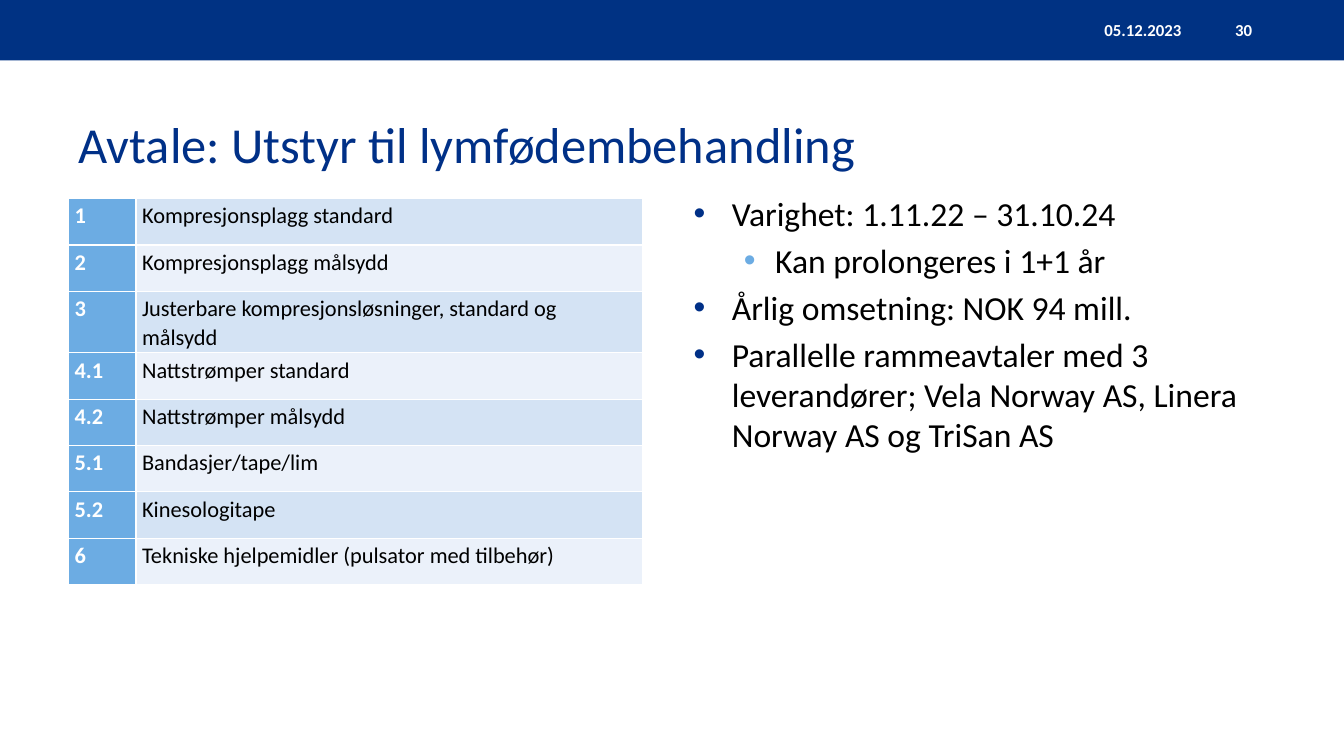
from lxml import etree
from pptx import Presentation
from pptx.dml.color import RGBColor
from pptx.enum.shapes import MSO_SHAPE
from pptx.enum.text import MSO_ANCHOR, PP_ALIGN
from pptx.oxml.ns import qn
from pptx.util import Inches, Pt

TITLE = "Avtale: Utstyr til lymfødembehandling"
DATE, PAGE = "05.12.2023", "30"
CATEGORIES = [
    ("1", "Kompresjonsplagg standard"),
    ("2", "Kompresjonsplagg målsydd"),
    ("3", "Justerbare kompresjonsløsninger, standard og målsydd"),
    ("4.1", "Nattstrømper standard"),
    ("4.2", "Nattstrømper målsydd"),
    ("5.1", "Bandasjer/tape/lim"),
    ("5.2", "Kinesologitape"),
    ("6", "Tekniske hjelpemidler (pulsator med tilbehør)"),
]
TERMS = [
    (0, "Varighet: 1.11.22 – 31.10.24"),
    (1, "Kan prolongeres i 1+1 år"),
    (0, "Årlig omsetning: NOK 94 mill."),
    (0, "Parallelle rammeavtaler med 3 leverandører; "
        "Vela Norway AS, Linera Norway AS og TriSan AS"),
]

BAND = RGBColor(0x00, 0x32, 0x83)
NAVY = RGBColor(0x00, 0x30, 0x87)
SKY = RGBColor(0x6C, 0xAC, 0xE3)
WHITE = RGBColor(0xFF, 0xFF, 0xFF)
BLACK = RGBColor(0x00, 0x00, 0x00)
STRIPES = (RGBColor(0xD4, 0xE3, 0xF4), RGBColor(0xEB, 0xF1, 0xFA))
BULLETS = [(0.38, 0.38, NAVY), (0.81, 0.31, SKY)]
TOP, MIDDLE = MSO_ANCHOR.TOP, MSO_ANCHOR.MIDDLE
LEFT, CENTER = PP_ALIGN.LEFT, PP_ALIGN.CENTER

FONT = "Calibri"
WIDTH, HEIGHT = 13.33, 7.5
BAND_HEIGHT = HEIGHT * 0.08
MARGIN = 0.68
TABLE_TOP, ROW_HEIGHT = 1.97, 0.46
COLUMNS = (0.67, 5.02)


def write(paragraph, text, size, color, bold=False):
    """Add one styled run to a paragraph."""
    run = paragraph.add_run()
    run.text = text
    run.font.name, run.font.size, run.font.bold = FONT, Pt(size), bold
    run.font.color.rgb = color


def text_frame(slide, place, anchor, inset=0.1):
    """Add a wrapping text box and return its frame."""
    frame = slide.shapes.add_textbox(*map(Inches, place)).text_frame
    frame.word_wrap = True
    frame.vertical_anchor = anchor
    frame.margin_left = frame.margin_right = Inches(inset)
    return frame


def add_bullet(paragraph, level):
    """Give a paragraph the indent and bullet of its level."""
    indent, hanging, color = BULLETS[level]
    paragraph.level = level
    props = paragraph._p.get_or_add_pPr()
    props.set("marL", str(Inches(indent)))
    props.set("indent", str(-Inches(hanging)))
    tint = etree.SubElement(props, qn("a:buClr"))
    etree.SubElement(tint, qn("a:srgbClr"), val=str(color))
    etree.SubElement(props, qn("a:buFont"), typeface="Arial")
    etree.SubElement(props, qn("a:buChar"), char="•")


def add_borders(cell):
    """Draw thin white lines on all sides of a cell."""
    props = cell._tc.get_or_add_tcPr()
    for index, side in enumerate(("lnL", "lnR", "lnT", "lnB")):
        line = etree.Element(qn(f"a:{side}"), w=str(Pt(1)))
        fill = etree.SubElement(line, qn("a:solidFill"))
        etree.SubElement(fill, qn("a:srgbClr"), val=str(WHITE))
        props.insert(index, line)


def add_categories(slide):
    """Add the numbered table of product categories."""
    place = (MARGIN, TABLE_TOP, sum(COLUMNS), ROW_HEIGHT * len(CATEGORIES))
    table = slide.shapes.add_table(
        len(CATEGORIES), len(COLUMNS), *map(Inches, place)).table
    table.first_row, table.first_col = False, True
    for column, width in zip(table.columns, COLUMNS):
        column.width = Inches(width)
    for index, category in enumerate(CATEGORIES):
        table.rows[index].height = Inches(ROW_HEIGHT)
        looks = ((SKY, WHITE, True), (STRIPES[index % 2], BLACK, False))
        for cell, text, (fill, color, bold) in zip(
                table.rows[index].cells, category, looks):
            cell.margin_left = cell.margin_right = Inches(0.06)
            cell.margin_top = cell.margin_bottom = Inches(0.02)
            cell.fill.solid()
            cell.fill.fore_color.rgb = fill
            add_borders(cell)
            paragraph = cell.text_frame.paragraphs[0]
            paragraph.line_spacing = 1.07
            paragraph.space_after = Pt(8)
            write(paragraph, text, 16, color, bold)


def add_terms(slide):
    """Add the bulleted contract terms."""
    frame = text_frame(slide, (6.78, 1.86, 5.89, 4.84), TOP)
    for index, (level, text) in enumerate(TERMS):
        paragraph = frame.add_paragraph() if index else frame.paragraphs[0]
        add_bullet(paragraph, level)
        paragraph.alignment = LEFT
        if index:
            paragraph.space_before = Pt(4.8)
        write(paragraph, text, 24, BLACK)


def main():
    """Build the slide and save it."""
    deck = Presentation()
    deck.slide_width, deck.slide_height = Inches(WIDTH), Inches(HEIGHT)
    slide = deck.slides.add_slide(deck.slide_layouts[6])

    band = slide.shapes.add_shape(
        MSO_SHAPE.RECTANGLE, 0, 0, Inches(WIDTH), Inches(BAND_HEIGHT))
    band.shadow.inherit = False
    band.fill.solid()
    band.fill.fore_color.rgb = BAND
    band.line.fill.background()

    title = text_frame(slide, (MARGIN, 1.07, WIDTH - 2 * MARGIN, 0.71), MIDDLE)
    write(title.paragraphs[0], TITLE, 36, NAVY)
    add_categories(slide)
    add_terms(slide)

    for text, left, width in ((DATE, 10.76, 1.15), (PAGE, 12.02, 0.63)):
        place = (left, (BAND_HEIGHT - 0.4) / 2, width, 0.4)
        label = text_frame(slide, place, MIDDLE, 0.04).paragraphs[0]
        label.alignment = CENTER
        write(label, text, 12, WHITE, True)
    deck.save("out.pptx")


if __name__ == "__main__":
    main()
